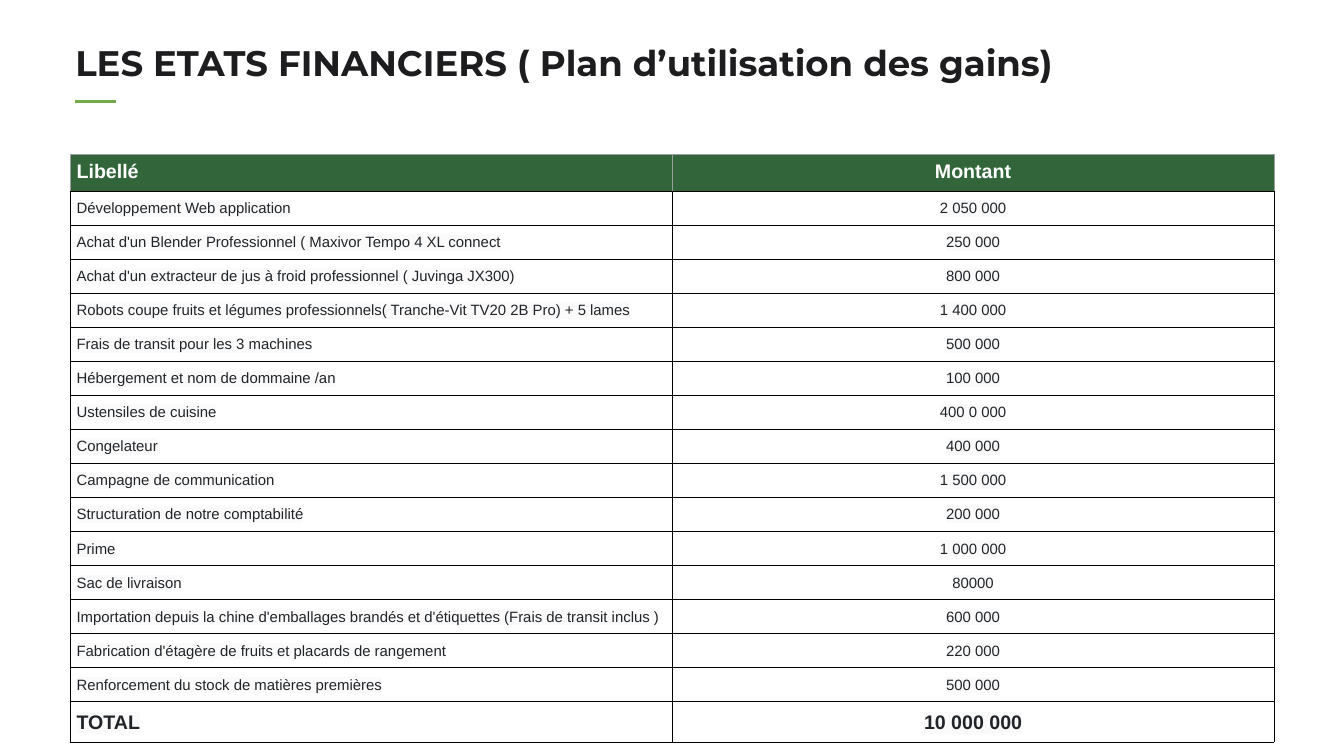
from lxml import etree
from pptx import Presentation
from pptx.dml.color import RGBColor
from pptx.enum.shapes import MSO_CONNECTOR
from pptx.enum.text import PP_ALIGN
from pptx.oxml.ns import qn
from pptx.util import Inches, Pt

LINE = MSO_CONNECTOR.STRAIGHT
LEFT, CENTER = PP_ALIGN.LEFT, PP_ALIGN.CENTER

WIDTH, HEIGHT = 20, 11.25
EDGE = 0.056 * WIDTH
COL, ROW = 8.96, 0.42
INK, GREEN, GREY, BLACK, PALE = "212529", "32653A", "9E9E9E", "000000", "FAFAFA"

TITLE = "LES ETATS FINANCIERS ( Plan d’utilisation des gains)"
HEAD = ("Libellé", "Montant")
COSTS = [
    ("Développement Web application", "2 050 000"),
    ("Achat d'un Blender Professionnel ( Maxivor Tempo 4 XL connect", "250 000"),
    ("Achat d'un extracteur de jus à froid professionnel ( Juvinga JX300)", "800 000"),
    ("Robots coupe fruits et légumes professionnels( Tranche-Vit TV20 2B Pro) + 5 lames",
     "1 400 000"),
    ("Frais de transit pour les 3 machines", "500 000"),
    ("Hébergement et nom de dommaine /an", "100 000"),
    ("Ustensiles de cuisine", "400 0 000"),
    ("Congelateur", "400 000"),
    ("Campagne de communication", "1 500 000"),
    ("Structuration de notre comptabilité", "200 000"),
    ("Prime", "1 000 000"),
    ("Sac de livraison", "80000"),
    ("Importation depuis la chine d'emballages brandés et d'étiquettes "
     "(Frais de transit inclus )", "600 000"),
    ("Fabrication d'étagère de fruits et placards de rangement", "220 000"),
    ("Renforcement du stock de matières premières", "500 000"),
]
TOTAL = ("TOTAL", "10 000 000")


def rgb(code):
    return RGBColor.from_string(code)


def write(frame, text, size, color, bold=False, face="Arial", space=1.0, align=LEFT):
    para = frame.paragraphs[0]
    para.alignment, para.line_spacing = align, space
    run = para.add_run()
    run.text = text
    font = para.font
    font.name, font.size, font.bold = face, Pt(size), bold
    font.color.rgb = rgb(color)
    return run


def add_mark(run, color):
    """Highlight behind a run."""
    mark = etree.SubElement(run._r.get_or_add_rPr(), qn("a:highlight"))
    etree.SubElement(mark, qn("a:srgbClr"), val=color)


def add_edges(cell, colors):
    """Cell borders, which must stand before the fill."""
    props = cell._tc.get_or_add_tcPr()
    for spot, (side, color) in enumerate(zip(("lnL", "lnR", "lnT", "lnB"), colors)):
        edge = etree.Element(qn("a:" + side), w=str(Pt(0.75)))
        fill = etree.SubElement(edge, qn("a:solidFill"))
        etree.SubElement(fill, qn("a:srgbClr"), val=color)
        props.insert(spot, edge)


def add_title(slide):
    box = slide.shapes.add_textbox(Inches(EDGE), Inches(0.55), Inches(18.29), Inches(0.64))
    frame = box.text_frame
    frame.word_wrap = True
    frame.margin_left = frame.margin_right = frame.margin_top = frame.margin_bottom = 0
    write(frame, TITLE, 38, "1D1D1F", True, "Montserrat", 1.1)


def add_rule(slide):
    y = Inches(1.51)
    rule = slide.shapes.add_connector(LINE, Inches(EDGE), y, Inches(EDGE + 0.61), y)
    rule.line.color.rgb = rgb("71AA48")
    rule.line.width = Pt(3.75)
    etree.SubElement(rule._element.spPr, qn("a:effectLst"))


def fill_cell(cell, text, align, head, bold):
    cell.margin_left = cell.margin_right = Inches(0.1)
    cell.margin_top = cell.margin_bottom = Inches(0.1)
    size = 21 if bold else 16
    if head:
        cell.fill.solid()
        cell.fill.fore_color.rgb = rgb(GREEN)
        add_edges(cell, (GREY, GREY, GREY, BLACK))
        write(cell.text_frame, text, size, "FFFFFF", bold, align=align)
    else:
        cell.fill.background()
        add_edges(cell, (BLACK,) * 4)
        run = write(cell.text_frame, text, size, INK, bold, space=1.15, align=align)
        add_mark(run, PALE)


def add_costs(slide):
    rows = [HEAD, *COSTS, TOTAL]
    table = slide.shapes.add_table(
        len(rows), len(HEAD), Inches(1.04), Inches(2.29),
        Inches(COL * len(HEAD)), Inches(ROW * len(rows))).table
    table.first_row = table.horz_banding = False
    for r, row in enumerate(rows):
        for c, text in enumerate(row):
            fill_cell(table.cell(r, c), text, (LEFT, CENTER)[c],
                      row is HEAD, row in (HEAD, TOTAL))


def main():
    deck = Presentation()
    deck.slide_width, deck.slide_height = Inches(WIDTH), Inches(HEIGHT)
    slide = deck.slides.add_slide(deck.slide_layouts[6])
    # Heading
    add_rule(slide)
    add_title(slide)
    # Spending plan
    add_costs(slide)
    deck.save("out.pptx")


if __name__ == "__main__":
    main()
